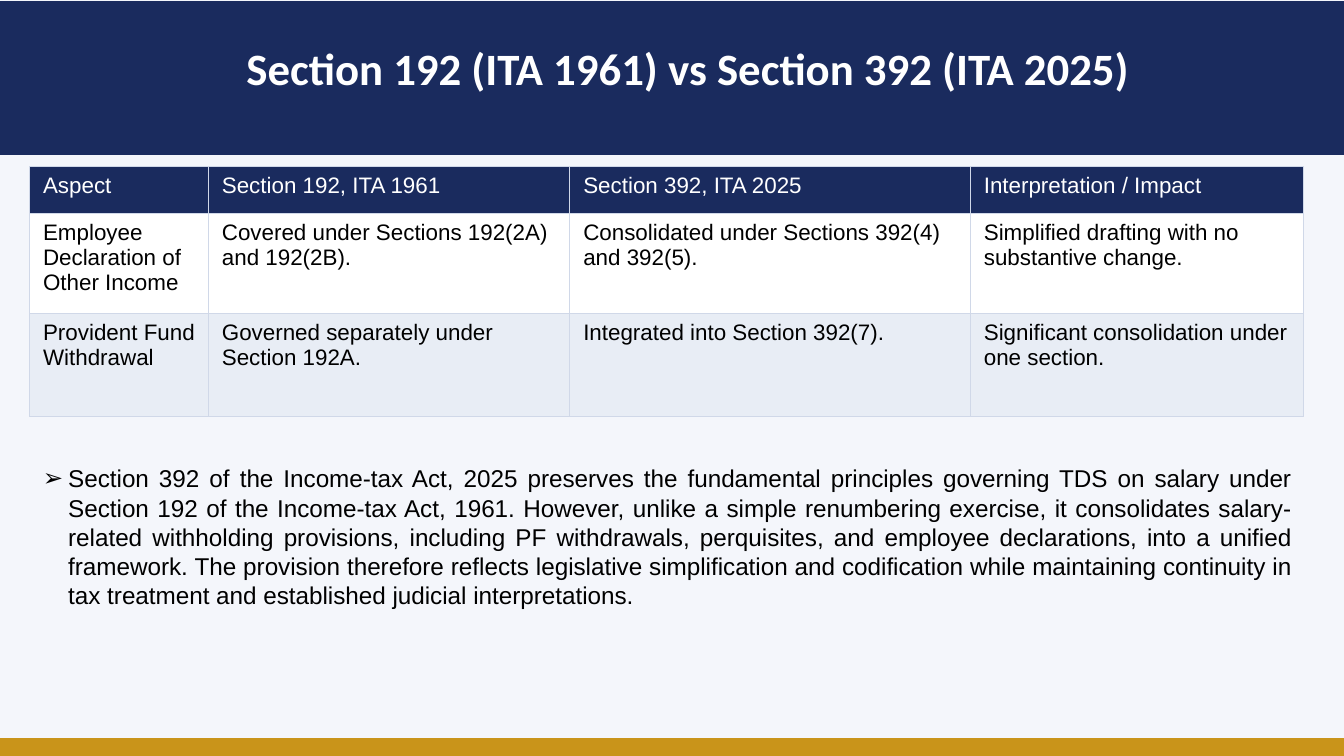
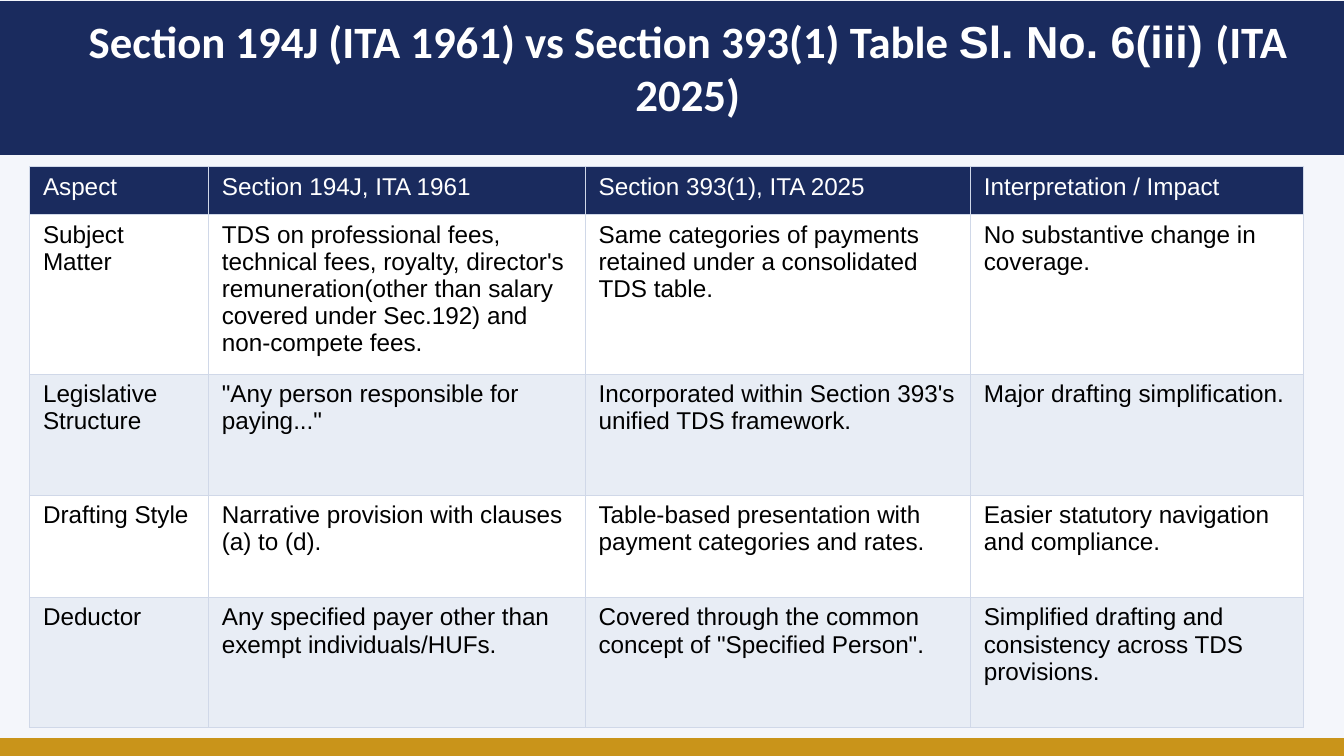
"""Build two slides comparing TDS sections of the 1961 and 2025 Income-tax Acts."""
from lxml.etree import SubElement
from pptx import Presentation
from pptx.dml.color import RGBColor
from pptx.enum.shapes import MSO_SHAPE
from pptx.enum.text import MSO_ANCHOR, MSO_AUTO_SIZE, PP_ALIGN
from pptx.oxml.ns import qn
from pptx.util import Cm, Pt

NAVY = RGBColor(0x1A, 0x2B, 0x5E)
GOLD = RGBColor(0xC9, 0x94, 0x1A)
PAGE = RGBColor(0xF4, 0xF6, 0xFB)
WHITE = RGBColor(0xFF, 0xFF, 0xFF)
BLACK = RGBColor(0x00, 0x00, 0x00)
STRIPE = RGBColor(0xE8, 0xED, 0xF5)
BORDER = RGBColor(0xD0, 0xD8, 0xE8)

LEFT, WIDTH = 0.56, 24.08

SLIDES = [
    {
        "title": [("Section 192 (ITA 1961) vs Section 392 (ITA 2025)", "Calibri")],
        "size": 12,
        "cols": [3.38, 6.83, 7.57, 6.3],
        "heights": [0.89, 1.88, 1.96],
        "rows": [
            ["Aspect", "Section 192, ITA 1961", "Section 392, ITA 2025",
             "Interpretation / Impact"],
            ["Employee Declaration of Other Income",
             "Covered under Sections 192(2A) and 192(2B).",
             "Consolidated under Sections 392(4) and 392(5).",
             "Simplified drafting with no substantive change."],
            ["Provident Fund Withdrawal",
             "Governed separately under Section 192A.",
             "Integrated into Section 392(7).",
             "Significant consolidation under one section."],
        ],
        "summary": (
            "Section 392 of the Income-tax Act, 2025 preserves the fundamental principles "
            "governing TDS on salary under Section 192 of the Income-tax Act, 1961. However, "
            "unlike a simple renumbering exercise, it consolidates salary-related withholding "
            "provisions, including PF withdrawals, perquisites, and employee declarations, into "
            "a unified framework. The provision therefore reflects legislative simplification "
            "and codification while maintaining continuity in tax treatment and established "
            "judicial interpretations."
        ),
    },
    {
        "title": [("Section 194J (ITA 1961) vs Section 393(1) Table ", "Calibri"),
                  ("Sl. No. 6(iii) ", "Arial"), ("(ITA 2025)", "Calibri")],
        "size": 13,
        "cols": [3.38, 7.12, 7.28, 6.3],
        "heights": [0.91, 2.79, 2.29, 1.93, 2.46],
        "rows": [
            ["Aspect", "Section 194J, ITA 1961", "Section 393(1), ITA 2025",
             "Interpretation / Impact"],
            ["Subject Matter",
             "TDS on professional fees, technical fees, royalty, director's remuneration(other "
             "than salary covered under Sec.192) and non-compete fees.",
             "Same categories of payments retained under a consolidated TDS table.",
             "No substantive change in coverage."],
            ["Legislative Structure",
             '"Any person responsible for paying..."',
             "Incorporated within Section 393's unified TDS framework.",
             "Major drafting simplification."],
            ["Drafting Style",
             "Narrative provision with clauses (a) to (d).",
             "Table-based presentation with payment categories and rates.",
             "Easier statutory navigation and compliance."],
            ["Deductor",
             "Any specified payer other than exempt individuals/HUFs.",
             'Covered through the common concept of "Specified Person".',
             "Simplified drafting and consistency across TDS provisions."],
        ],
        "summary": None,
    },
]


def add_run(p, text, size=13, font="Arial", color=BLACK, bold=False):
    r = p.add_run()
    r.text = text
    r.font.size = Pt(size)
    r.font.name = font
    r.font.color.rgb = color
    r.font.bold = bold


def add_band(s, top, height, color):
    sp = s.shapes.add_shape(MSO_SHAPE.RECTANGLE, 0, Cm(top), prs.slide_width, Cm(height))
    sp.shadow.inherit = False
    sp.fill.solid()
    sp.fill.fore_color.rgb = color
    sp.line.color.rgb = color
    sp.line.width = Pt(1)


prs = Presentation()
prs.slide_width, prs.slide_height = Cm(25.4), Cm(14.29)

for data in SLIDES:
    s = prs.slides.add_slide(prs.slide_layouts[6])
    s.background.fill.solid()
    s.background.fill.fore_color.rgb = PAGE

    add_band(s, 0.03, 2.88, NAVY)
    tf = s.shapes.add_textbox(Cm(1.35), Cm(0.38), Cm(23.3), Cm(1.78)).text_frame
    tf.word_wrap = True
    tf.vertical_anchor = MSO_ANCHOR.MIDDLE
    tf.margin_left = tf.margin_right = tf.margin_top = tf.margin_bottom = 0
    p = tf.paragraphs[0]
    p.alignment = PP_ALIGN.CENTER
    for text, font in data["title"]:
        add_run(p, text, size=24, font=font, color=WHITE, bold=True)

    rows, cols, heights = data["rows"], data["cols"], data["heights"]
    table = s.shapes.add_table(len(rows), len(cols), Cm(LEFT), Cm(3.15),
                               Cm(WIDTH), Cm(sum(heights))).table
    table.horz_banding = False
    for column, width in zip(table.columns, cols):
        column.width = Cm(width)
    for i, (row, height) in enumerate(zip(rows, heights)):
        table.rows[i].height = Cm(height)
        fill = NAVY if i == 0 else WHITE if i % 2 else STRIPE
        for j, text in enumerate(row):
            cell = table.cell(i, j)
            tcPr = cell._tc.get_or_add_tcPr()
            for side in ("a:lnL", "a:lnR", "a:lnT", "a:lnB"):
                ln = SubElement(tcPr, qn(side), w=str(Pt(0.5)))
                SubElement(SubElement(ln, qn("a:solidFill")), qn("a:srgbClr"), val=str(BORDER))
            cell.fill.solid()
            cell.fill.fore_color.rgb = fill
            add_run(cell.text_frame.paragraphs[0], text, size=data["size"],
                    color=BLACK if i else WHITE)

    add_band(s, 13.97, 0.31, GOLD)

    if data["summary"]:
        tf = s.shapes.add_textbox(Cm(LEFT), Cm(8.64), Cm(WIDTH), Cm(3.02)).text_frame
        tf.word_wrap = True
        tf.auto_size = MSO_AUTO_SIZE.SHAPE_TO_FIT_TEXT
        p = tf.paragraphs[0]
        p.alignment = PP_ALIGN.JUSTIFY
        pPr = p._p.get_or_add_pPr()
        pPr.set("marL", str(Cm(0.48)))
        pPr.set("indent", str(-Cm(0.48)))
        SubElement(pPr, qn("a:buFont"), typeface="Arial")
        SubElement(pPr, qn("a:buChar"), char="➢")
        add_run(p, data["summary"])

prs.save("out.pptx")
